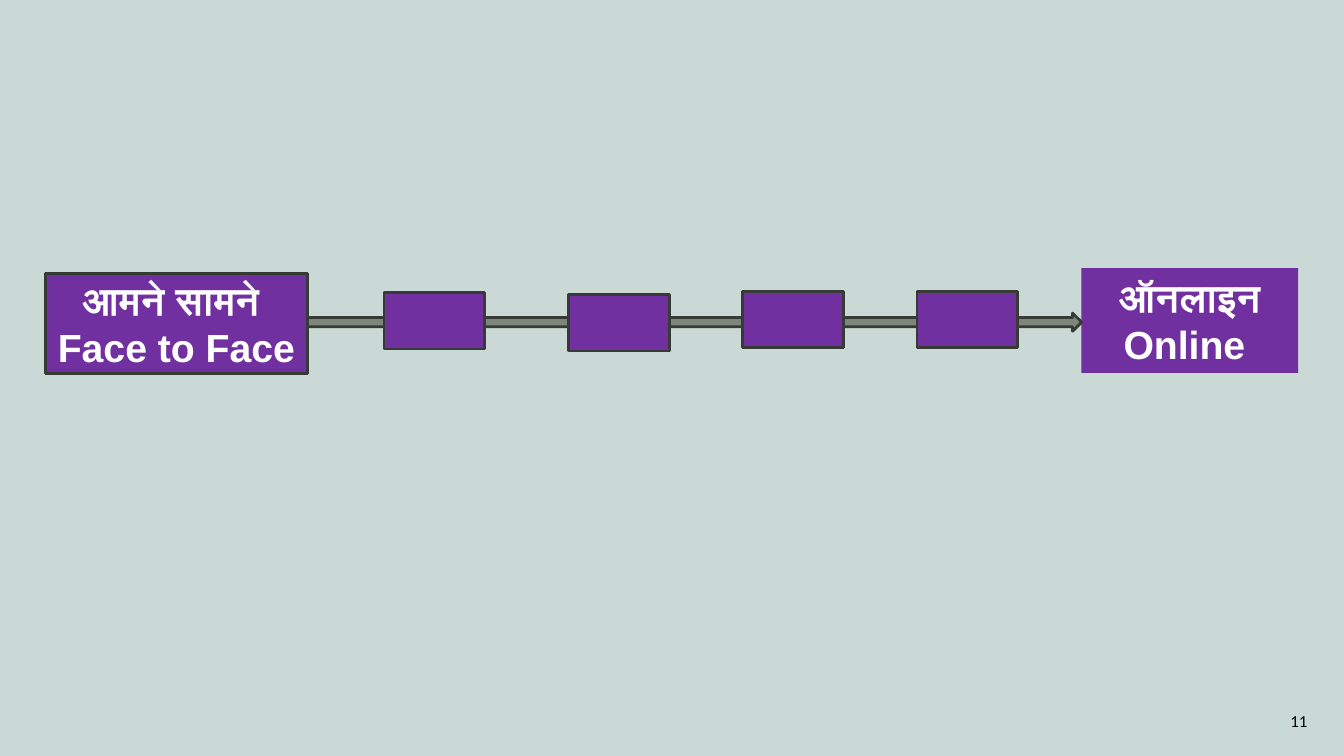
from pptx import Presentation
from pptx.dml.color import RGBColor
from pptx.enum.shapes import MSO_SHAPE
from pptx.enum.text import MSO_ANCHOR, PP_ALIGN
from pptx.util import Pt

PURPLE, GREY, DARK = "7030A0", "7E8679", "373B35"


def paint(fmt, color):
    """Give a fill a solid colour."""
    fmt.solid()
    fmt.fore_color.rgb = RGBColor.from_string(color)


def add_box(kind, left, top, width, height, fill, edge=True):
    box = slide.shapes.add_shape(kind, Pt(left), Pt(top), Pt(width), Pt(height))
    box.shadow.inherit = False
    paint(box.fill, fill)
    if edge:
        paint(box.line.fill, DARK)
        box.line.width = Pt(2)
    else:
        box.line.fill.background()
    return box


deck = Presentation()
deck.slide_width, deck.slide_height = Pt(960), Pt(540)
slide = deck.slides.add_slide(deck.slide_layouts[6])
paint(slide.background.fill, "CAD8D6")

# Both ends of the scale
start = add_box(MSO_SHAPE.RECTANGLE, 32.4, 195.1, 187.2, 72, PURPLE)
end = add_box(MSO_SHAPE.RECTANGLE, 772.5, 191.5, 154.8, 74.9, PURPLE, edge=False)
labels = [
    (start, "आमने सामने \nFace to Face ", MSO_ANCHOR.MIDDLE),
    (end, "ऑनलाइन\nOnline ", MSO_ANCHOR.TOP),
]
for box, text, anchor in labels:
    frame = box.text_frame
    frame.text = text
    frame.word_wrap = True
    frame.vertical_anchor = anchor
    for para in frame.paragraphs:
        para.alignment = PP_ALIGN.CENTER
        font = para.runs[0].font
        font.name, font.size, font.bold = "Arial", Pt(28), True
        paint(font.fill, "FFFFFF")

# Arrow with the empty steps on it
arrow = add_box(MSO_SHAPE.RIGHT_ARROW, 219.6, 223.6, 553, 13, GREY)
for left, top in [(274.3, 208.8), (406, 210.2), (530.5, 208), (655, 208)]:
    add_box(MSO_SHAPE.RECTANGLE, left, top, 72, 40.5, PURPLE)

# Slide number
number = slide.shapes.add_textbox(Pt(725), Pt(500.5), Pt(216), Pt(28.8))
frame = number.text_frame
frame.text = "11"
frame.word_wrap = True
frame.vertical_anchor = MSO_ANCHOR.MIDDLE
para = frame.paragraphs[0]
para.alignment = PP_ALIGN.RIGHT
font = para.runs[0].font
font.name, font.size = "Calibri", Pt(12)
paint(font.fill, "000000")

deck.save("out.pptx")
